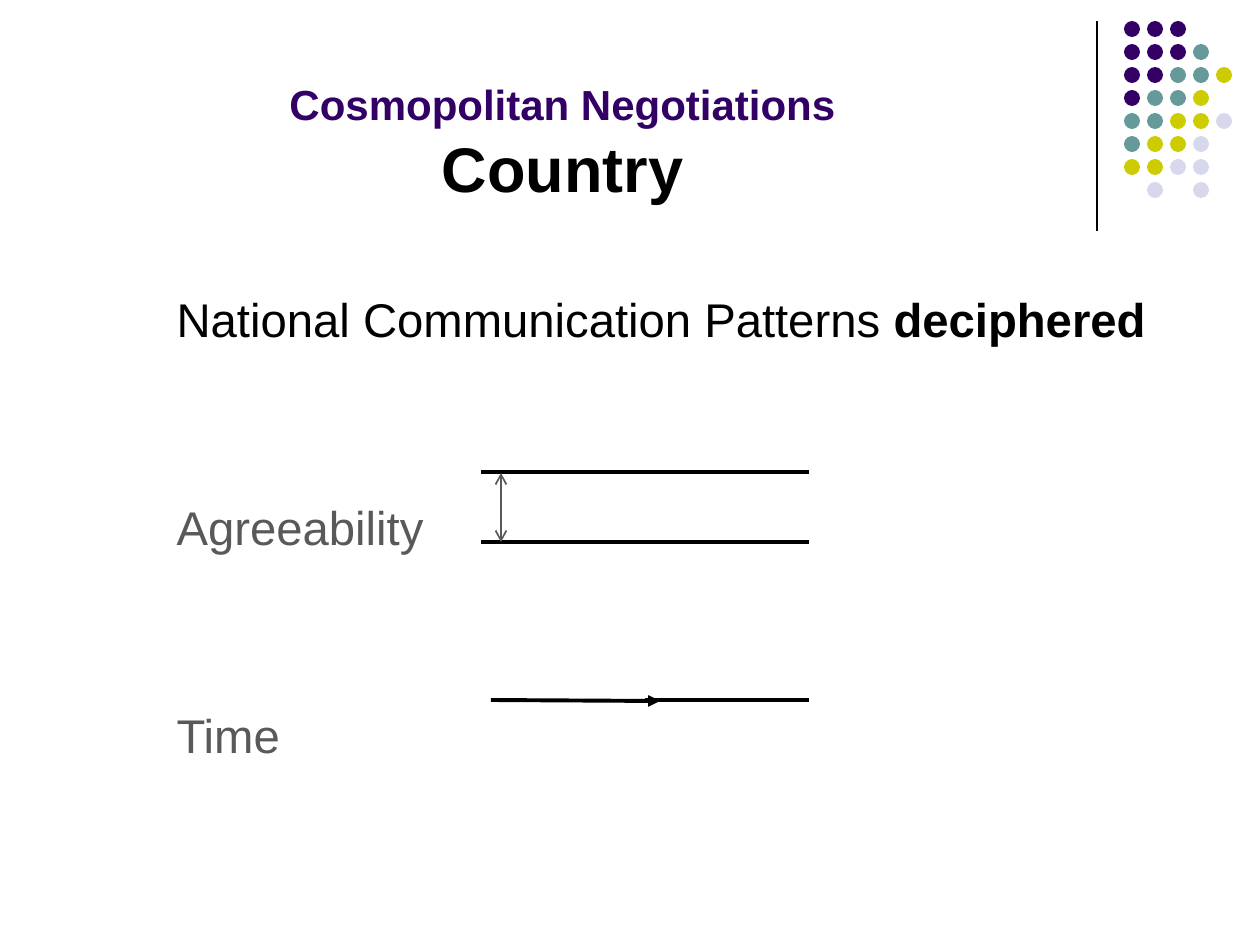
from dataclasses import dataclass

from lxml.etree import SubElement
from pptx import Presentation
from pptx.dml.color import RGBColor
from pptx.enum.shapes import MSO_CONNECTOR, MSO_SHAPE
from pptx.enum.text import MSO_ANCHOR, MSO_AUTO_SIZE, PP_ALIGN
from pptx.oxml.ns import qn
from pptx.text.text import TextFrame
from pptx.util import Emu, Pt

PX_PER_INCH = 126
FONT = "Arial"
BLACK = RGBColor(0x00, 0x00, 0x00)
GRAY = RGBColor(0x59, 0x59, 0x59)
PURPLE = RGBColor(0x33, 0x00, 0x66)
TEAL = RGBColor(0x66, 0x99, 0x99)
LIME = RGBColor(0xCC, 0xCC, 0x00)
LAVENDER = RGBColor(0xD8, 0xD8, 0xEC)

DOT_COLORS = {"P": PURPLE, "T": TEAL, "L": LIME, "V": LAVENDER}
DOT_ROWS = ["PPP", "PPPT", "PPTTL", "PTTL", "TTLLV", "TLLV", "LLVV", " V V"]
DOT_LEFT, DOT_TOP, DOT_PITCH, DOT_SIZE = 1124, 21, 23, 16


@dataclass
class Line:
    x1: int
    y1: int
    x2: int
    y2: int
    width: float = 2.25
    color: RGBColor = BLACK
    head: str = ""
    tail: str = ""


DIVIDER = Line(1097, 21, 1097, 231, 0.75)
DIAGRAM_LINES = [
    Line(481, 472, 809, 472),
    Line(481, 542, 809, 542),
    Line(501, 473, 501, 542, 1, GRAY, "arrow", "arrow"),
    Line(491, 700, 660, 701, tail="triangle"),
    Line(645, 700, 809, 700),
]


def px(n: int) -> Emu:
    return Emu(round(n * 914400 / PX_PER_INCH))


def add_line(slide, line: Line) -> None:
    cx = slide.shapes.add_connector(
        MSO_CONNECTOR.STRAIGHT, px(line.x1), px(line.y1), px(line.x2), px(line.y2))
    cx.line.width = Pt(line.width)
    cx.line.color.rgb = line.color
    for tag, kind in (("a:headEnd", line.head), ("a:tailEnd", line.tail)):
        if kind:
            SubElement(cx.line._get_or_add_ln(), qn(tag), type=kind)
    SubElement(cx._element.spPr, qn("a:effectLst"))


def add_dots(slide) -> None:
    for row, codes in enumerate(DOT_ROWS):
        for col, code in enumerate(codes):
            if code not in DOT_COLORS:
                continue
            dot = slide.shapes.add_shape(
                MSO_SHAPE.OVAL, px(DOT_LEFT + col * DOT_PITCH),
                px(DOT_TOP + row * DOT_PITCH), px(DOT_SIZE), px(DOT_SIZE))
            dot.shadow.inherit = False
            dot.fill.solid()
            dot.fill.fore_color.rgb = DOT_COLORS[code]
            dot.line.fill.background()


def place(sp, left: int, top: int, width: int, height: int,
          anchor: MSO_ANCHOR) -> TextFrame:
    """Move a placeholder and return its text frame with autofit off."""
    sp.left, sp.top, sp.width, sp.height = map(px, (left, top, width, height))
    tf = sp.text_frame
    tf.word_wrap = True
    tf.auto_size = MSO_AUTO_SIZE.NONE
    tf.vertical_anchor = anchor
    return tf


def style_run(r, size: int, color: RGBColor, bold: bool = False) -> None:
    r.font.name = FONT
    r.font.size = Pt(size)
    r.font.color.rgb = color
    r.font.bold = bold


def fill_title(slide) -> None:
    tf = place(slide.shapes.title, 32, 32, 1061, 179, MSO_ANCHOR.BOTTOM)
    tf.text = "Cosmopolitan Negotiations\vCountry"
    p = tf.paragraphs[0]
    p.alignment = PP_ALIGN.CENTER
    heading, subject = p.runs
    style_run(heading, 24, PURPLE, True)
    style_run(subject, 36, BLACK, True)


def fill_body(slide) -> None:
    tf = place(slide.placeholders[1], 158, 284, 1018, 480, MSO_ANCHOR.TOP)
    tf.text = "National Communication Patterns \nAgreeability\nTime"
    tf.paragraphs[0].add_run().text = "deciphered"
    for i, p in enumerate(tf.paragraphs):
        pPr = p._p.get_or_add_pPr()
        pPr.set("marL", str(px(6)))
        pPr.set("indent", "0")
        SubElement(pPr, qn("a:buNone"))
        p.space_before = Pt(86.5 if i else 0)
        for r in p.runs:
            style_run(r, 27, GRAY if i else BLACK, r.text == "deciphered")


def main() -> None:
    prs = Presentation()
    prs.slide_width, prs.slide_height = px(1260), px(945)
    slide = prs.slides.add_slide(prs.slide_layouts[1])
    add_line(slide, DIVIDER)
    add_dots(slide)
    fill_title(slide)
    fill_body(slide)
    for line in DIAGRAM_LINES:
        add_line(slide, line)
    prs.save("out.pptx")


if __name__ == "__main__":
    main()
